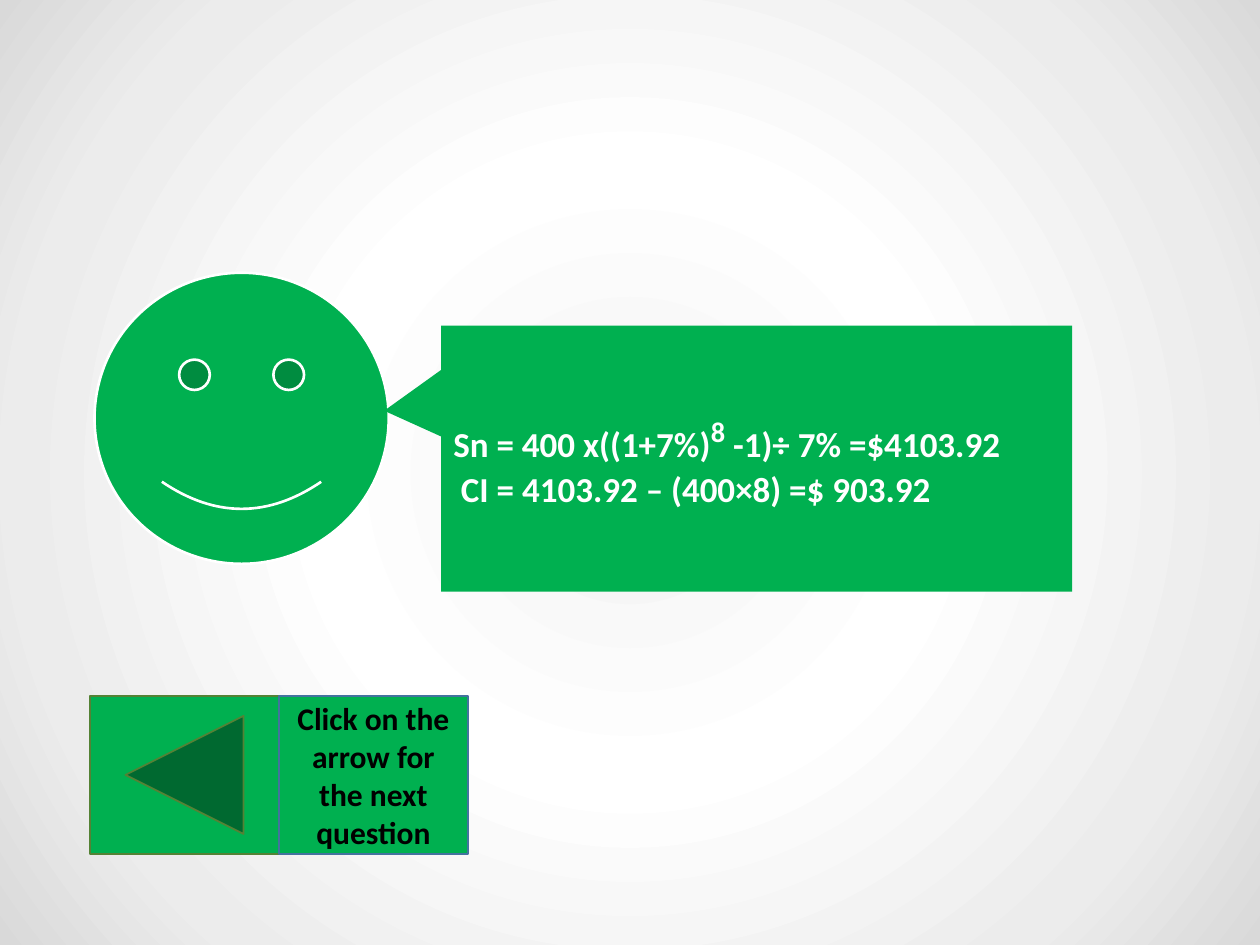
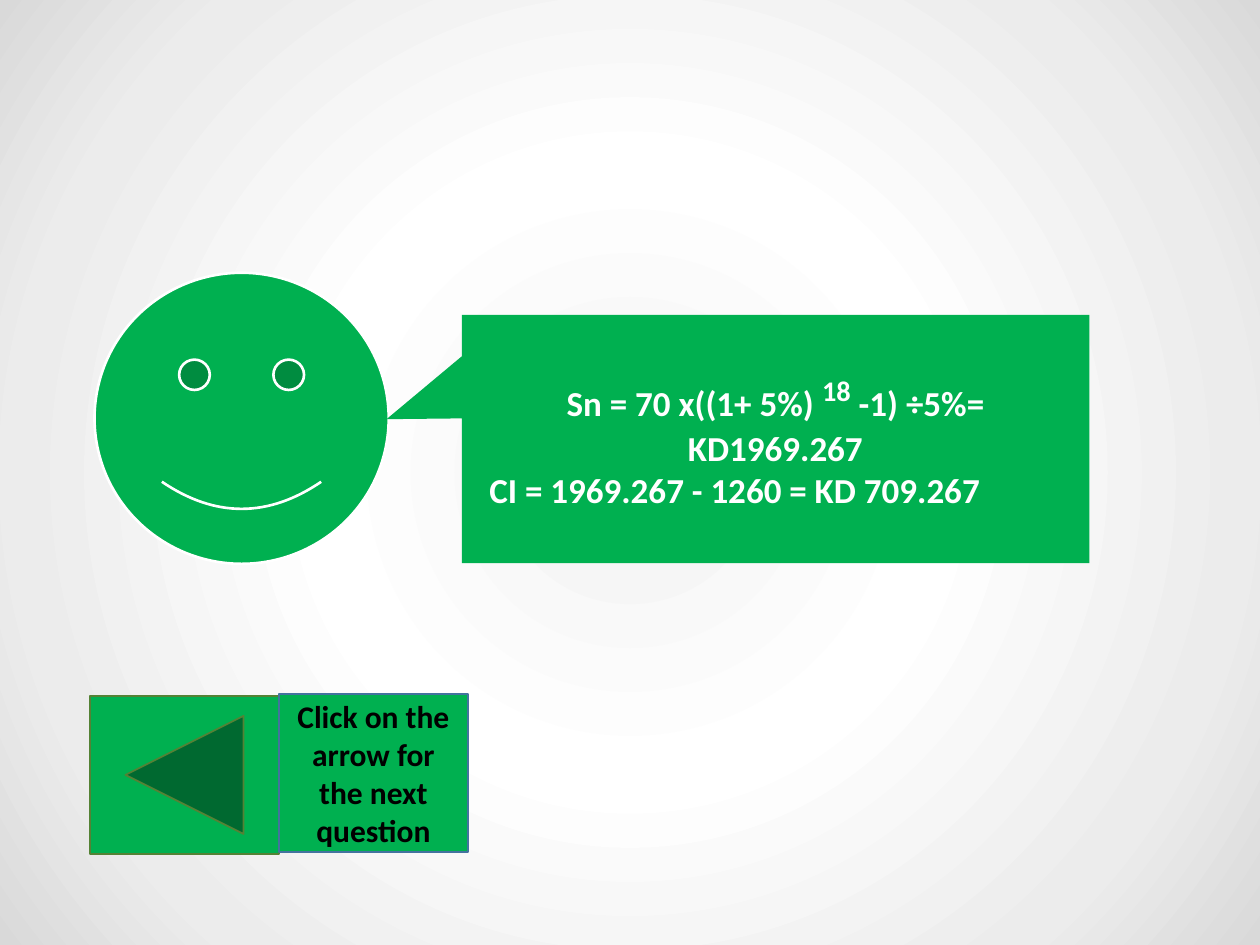
import lxml.etree
import pptx
import pptx.dml.color
import pptx.enum.shapes
import pptx.enum.text
import pptx.oxml.ns
import pptx.util

HUES = {
    "green": "00B050", "white": "FFFFFF", "black": "000000",
    "olive": "548235", "blue": "43739E",
    "pale": "F2F2F2", "mist": "ECECEC", "gray": "D9D9D9",
}
GLOW = [(0, "pale"), (39, "white"), (78, "mist"), (100, "gray")]
FONT = "Calibri"
COLS, ROWS = 20, 15
KIND = pptx.enum.shapes.MSO_SHAPE
ALIGN = pptx.enum.text.PP_ALIGN
HINT = "Click on the arrow for the next question"


def tone(name):
    return pptx.dml.color.RGBColor.from_string(HUES[name])


def write(para, text, size=20, hue="white", lift=0):
    run = para.add_run()
    run.text = text
    run.font.name = FONT
    run.font.size = pptx.util.Pt(size)
    run.font.bold = True
    run.font.color.rgb = tone(hue)
    if lift:
        run.font._element.set("baseline", str(lift * 1000))


class Deck:
    """Hold the shared style and the current slide, and draw on its grid."""

    def __init__(self):
        self.show = pptx.Presentation()
        self.show.slide_width = pptx.util.Inches(10)
        self.show.slide_height = pptx.util.Inches(7.5)
        self.slide = None

    def page(self):
        self.slide = self.show.slides.add_slide(self.show.slide_layouts[6])
        self.slide.background.fill.gradient()
        qn = pptx.oxml.ns.qn
        grad = self.slide.background._cSld.find(".//" + qn("a:gradFill"))
        for part in list(grad):
            grad.remove(part)
        stops = lxml.etree.SubElement(grad, qn("a:gsLst"))
        for place, hue in GLOW:
            stop = lxml.etree.SubElement(stops, qn("a:gs"), pos=str(place * 1000))
            lxml.etree.SubElement(stop, qn("a:srgbClr"), val=HUES[hue])
        ring = lxml.etree.SubElement(grad, qn("a:path"), path="circle")
        half = dict.fromkeys("ltrb", "50000")
        lxml.etree.SubElement(ring, qn("a:fillToRect"), **half)

    def shape(self, kind, left, top, wide, high, line=None, width=1, adjust=()):
        col = self.show.slide_width / COLS
        row = self.show.slide_height / ROWS
        item = self.slide.shapes.add_shape(
            kind, int(left * col), int(top * row), int(wide * col), int(high * row))
        item.shadow.inherit = False
        item.fill.solid()
        item.fill.fore_color.rgb = tone("green")
        if line:
            item.line.color.rgb = tone(line)
            item.line.width = pptx.util.Pt(width)
        else:
            item.line.fill.background()
        for spot, value in enumerate(adjust):
            item.adjustments[spot] = value
        item.text_frame.word_wrap = True
        item.text_frame.vertical_anchor = pptx.enum.text.MSO_ANCHOR.MIDDLE
        return item

    def face(self):
        self.shape(KIND.SMILEY_FACE, 1.5, 4.33, 4.67, 4.62, "white", 1.5, [0.05])

    def bubble(self, box, tip, lines):
        frame = self.shape(KIND.RECTANGULAR_CALLOUT, *box, adjust=tip).text_frame
        for spot, (align, indent, parts) in enumerate(lines):
            para = frame.add_paragraph() if spot else frame.paragraphs[0]
            para.alignment = align
            para._p.get_or_add_pPr().set("marL", str(pptx.util.Inches(indent)))
            for text, style in parts:
                write(para, text, **style)

    def button(self, top):
        left, wide, high = 1.43, 3, 2.5
        self.shape(KIND.ACTION_BUTTON_BACK_OR_PREVIOUS,
                   left, 11.05, wide, high, "olive")
        label = self.shape(KIND.PENTAGON, left + wide, top, wide, high,
                           "blue", adjust=[0])
        label.element.spPr.get_or_add_xfrm().set("flipH", "1")
        para = label.text_frame.paragraphs[0]
        para.alignment = ALIGN.CENTER
        write(para, HINT, size=18, hue="black")


def main():
    power = {"size": 28, "lift": 30}
    pages = [
        ((7, 5.17, 10.02, 4.22), (-0.59, -0.18), 11.05, [
            (ALIGN.LEFT, 0, [("Sn = 400 x((1+7%)", {}), ("8", power),
                             (" -1)÷ 7% =$4103.92", {})]),
            (ALIGN.LEFT, 0.06, [("CI = 4103.92 – (400×8) =$ 903.92", {})]),
        ]),
        ((7.33, 5, 9.96, 3.94), (-0.62, -0.08), 11.02, [
            (ALIGN.CENTER, 0, [("Sn = 70 x((1+ 5%) ", {}), ("18", power),
                               (" -1) ÷5%=", {})]),
            (ALIGN.CENTER, 0, [("KD1969.267", {})]),
            (ALIGN.LEFT, 0.12, [("CI = 1969.267 - 1260 = KD 709.267", {})]),
        ]),
    ]
    deck = Deck()
    for box, tip, top, lines in pages:
        deck.page()
        deck.face()
        deck.bubble(box, tip, lines)
        deck.button(top)
    deck.show.save("out.pptx")


if __name__ == "__main__":
    main()
